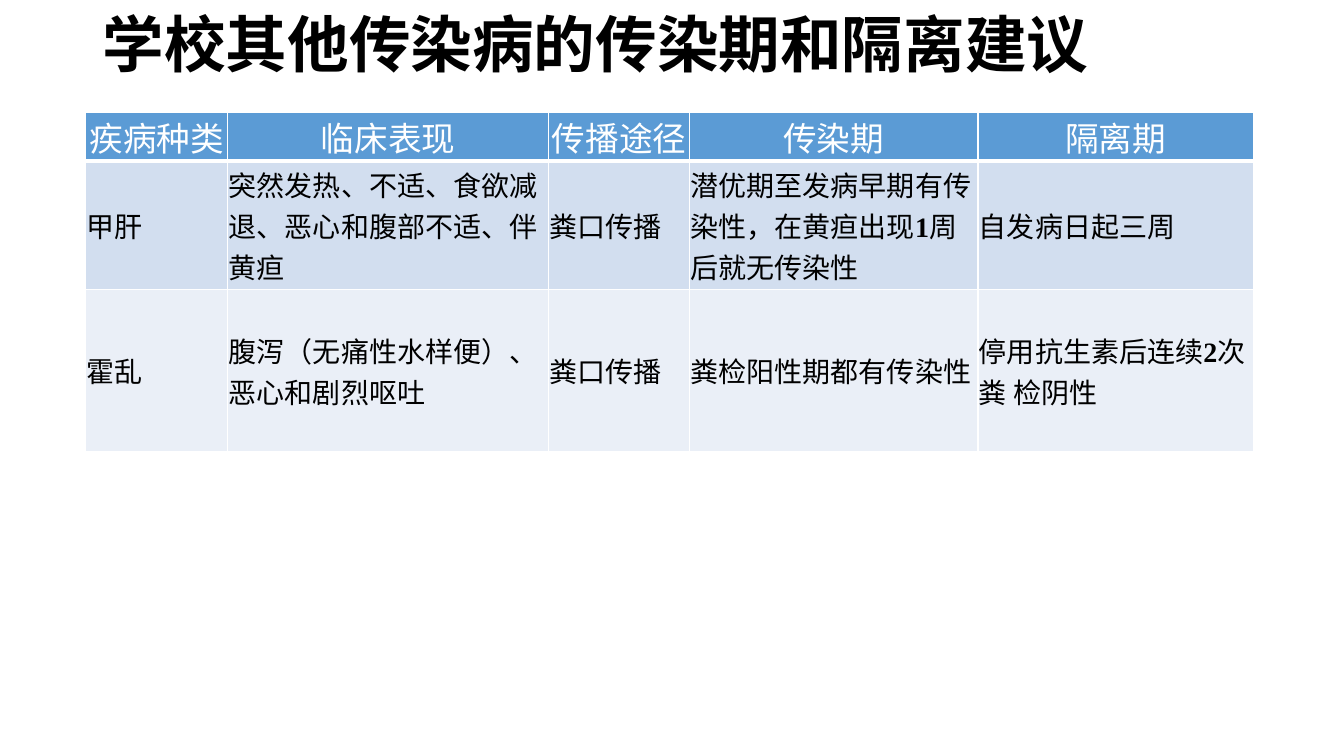
from lxml.etree import SubElement
from pptx import Presentation
from pptx.dml.color import RGBColor
from pptx.enum.text import MSO_ANCHOR, PP_ALIGN
from pptx.oxml.ns import qn
from pptx.util import Inches, Pt

CHINESE_FONT = "Noto Sans CJK SC"
DIGIT_FONT = "Times New Roman"
WHITE, BLACK = "FFFFFF", "000000"
ROW_FILLS = ["5B9BD5", "D2DEEF", "EAEFF7"]
COLUMN_WIDTHS = [1.41, 3.18, 1.4, 2.86, 2.73]
ROW_HEIGHTS = [0.48, 1.27, 1.61]

# Each cell is a list of runs; runs of digits are set bold in DIGIT_FONT.
DISEASE_ROWS = [
    [["疾病种类"], ["临床表现"], ["传播途径"], ["传染期"], ["隔离期"]],
    [["甲肝"], ["突然发热、不适、食欲减退、恶心和腹部不适、伴黄疸"], ["粪口传播"],
     ["潜优期至发病早期有传染性，在黄疸出现", "1", "周后就无传染性"],
     ["自发病日起三周"]],
    [["霍乱"], ["腹泻（无痛性水样便）、恶心和剧烈呕吐"], ["粪口传播"],
     ["粪检阳性期都有传染性"],
     ["停用抗生素后连续", "2", "次粪 检阴性"]],
]


def color(hex_value):
    return RGBColor.from_string(hex_value)


def add_run(paragraph, text, size, hex_color, font=CHINESE_FONT, bold=False):
    run = paragraph.add_run()
    run.text = text
    run.font.size = Pt(size)
    run.font.bold = bold
    run.font.name = font
    run.font.color.rgb = color(hex_color)
    SubElement(run.font._element, qn("a:ea"), typeface=CHINESE_FONT)


def add_title(slide, text, width):
    box = slide.shapes.add_textbox(Inches(0.92), 0, width, Inches(0.95))
    frame = box.text_frame
    frame.word_wrap = True
    frame.vertical_anchor = MSO_ANCHOR.MIDDLE
    paragraph = frame.paragraphs[0]
    paragraph.line_spacing = 0.9
    add_run(paragraph, text, 44, BLACK, "Calibri", True)


def set_borders(cell, bottom_width, top_width):
    """Draw white cell borders; they must precede the fill in tcPr."""
    properties = cell._tc.get_or_add_tcPr()
    widths = {"a:lnL": 1, "a:lnR": 1, "a:lnT": top_width, "a:lnB": bottom_width}
    for side, width in widths.items():
        line = SubElement(properties, qn(side), w=str(Pt(width)))
        fill = SubElement(line, qn("a:solidFill"))
        SubElement(fill, qn("a:srgbClr"), val=WHITE)


def fill_cell(cell, runs, row_index):
    is_header = row_index == 0
    cell.margin_left = cell.margin_right = Inches(0.01)
    cell.margin_top = cell.margin_bottom = 0
    cell.vertical_anchor = MSO_ANCHOR.MIDDLE
    set_borders(cell, 3 if is_header else 1, 3 if row_index == 1 else 1)
    cell.fill.solid()
    cell.fill.fore_color.rgb = color(ROW_FILLS[row_index])
    paragraph = cell.text_frame.paragraphs[0]
    paragraph.alignment = PP_ALIGN.CENTER if is_header else PP_ALIGN.LEFT
    for text in runs:
        is_digit = text.isdigit()
        add_run(paragraph, text, 24 if is_header else 20,
                WHITE if is_header else BLACK,
                DIGIT_FONT if is_digit else CHINESE_FONT, is_digit)


def add_disease_table(slide):
    table = slide.shapes.add_table(
        len(ROW_HEIGHTS), len(COLUMN_WIDTHS), Inches(0.85), Inches(1.12),
        Inches(sum(COLUMN_WIDTHS)), Inches(sum(ROW_HEIGHTS))).table
    for column, width in zip(table.columns, COLUMN_WIDTHS):
        column.width = Inches(width)
    for row_index, row_runs in enumerate(DISEASE_ROWS):
        row = table.rows[row_index]
        row.height = Inches(ROW_HEIGHTS[row_index])
        for cell, runs in zip(row.cells, row_runs):
            fill_cell(cell, runs, row_index)


def main():
    presentation = Presentation()
    presentation.slide_width = Inches(13.33)
    presentation.slide_height = Inches(7.5)
    slide = presentation.slides.add_slide(presentation.slide_layouts[6])
    add_title(slide, "学校其他传染病的传染期和隔离建议", Inches(11.5))
    add_disease_table(slide)
    presentation.save("out.pptx")


if __name__ == "__main__":
    main()
